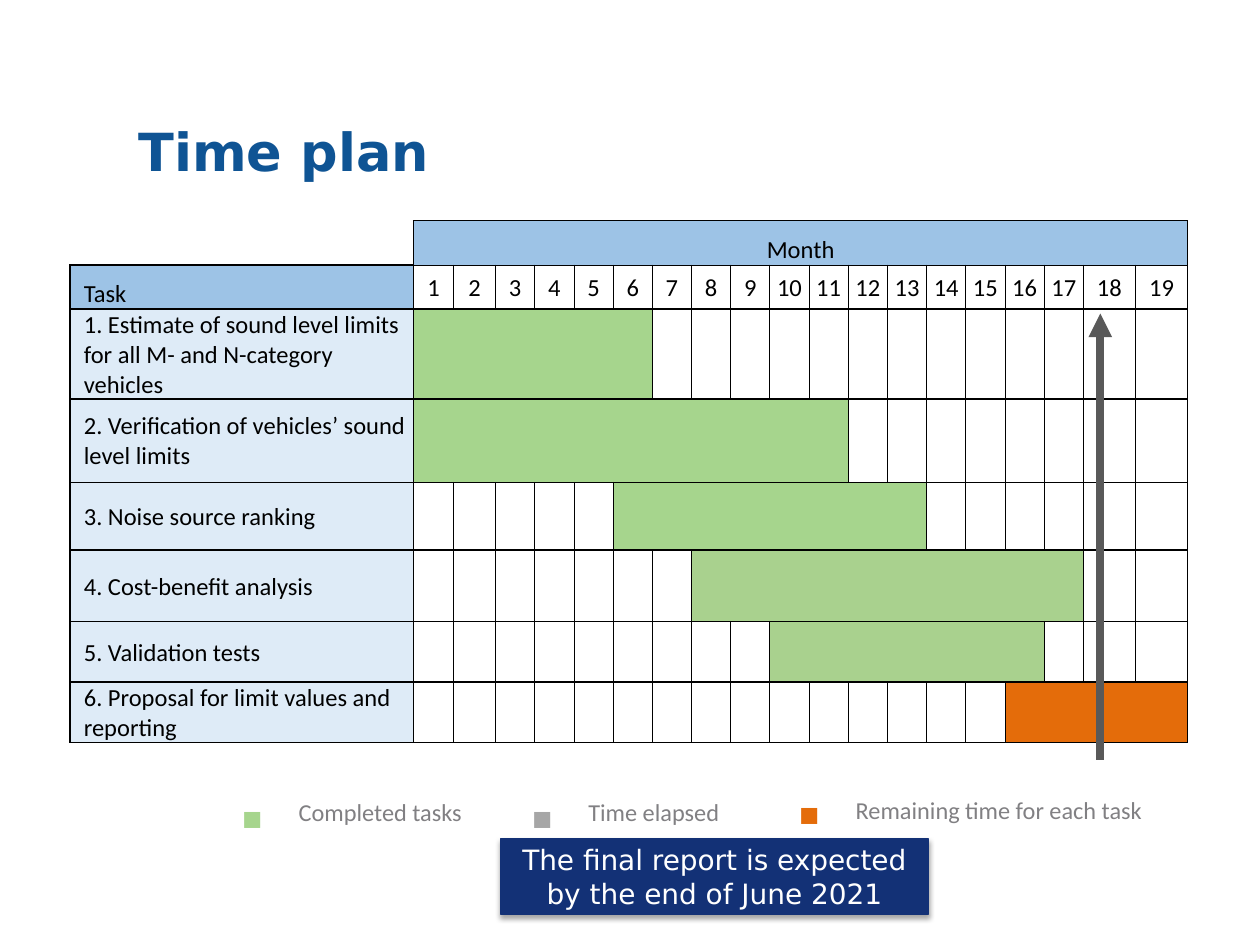
from lxml.etree import SubElement
from pptx import Presentation
from pptx.dml.color import RGBColor
from pptx.enum.shapes import MSO_CONNECTOR, MSO_SHAPE
from pptx.enum.text import MSO_ANCHOR as ANCHOR, PP_ALIGN as ALIGN
from pptx.oxml import parse_xml
from pptx.oxml.ns import nsdecls, qn
from pptx.util import Cm, Pt

BLACK, HEADER, TASK = "000000", "9DC3E6", "DEEBF7"
DONE, DONE_LATE, ELAPSED, REMAINING = "A6D58D", "A9D18E", "A6A6A6", "E46C0A"
LEGEND_TEXT, ARROW, NAVY, TITLE = "818083", "595959", "133176", "0F5494"

MONTHS = 19
# task, first month, last month, bar colour, row height in cm
TASKS = [
    ("1. Estimate of sound level limits for all M- and N-category vehicles", 1, 6, DONE, 1.81),
    ("2. Verification of vehicles’ sound level limits", 1, 11, DONE, 1.69),
    ("3. Noise source ranking", 6, 13, DONE, 1.36),
    ("4. Cost-benefit analysis", 8, 17, DONE_LATE, 1.44),
    ("5. Validation tests", 10, 16, DONE_LATE, 1.22),
    ("6. Proposal for limit values and reporting", 16, 19, REMAINING, 1.22),
]
HEADER_HEIGHT = 0.89
# task, month 1, three parts of month 2, months 3 to 17, months 18 and 19
COLUMN_WIDTHS = [6.93, 0.8, 0.31, 0.33, 0.21] + [0.79] * 15 + [1.05] * 2
LAST_COLUMN = len(COLUMN_WIDTHS) - 1
# label, bullet colour, baseline raise in %, left, top, width, height in cm
LEGEND = [
    ("Completed tasks", DONE, 35, 4.62, 15.88, 5.94, 1.04),
    ("Time elapsed", ELAPSED, 35, 10.46, 15.88, 5.94, 1.04),
    ("Remaining time for each task", REMAINING, 30, 15.85, 15.8, 9.07, 1.12),
]


def rgb(hex_color):
    return RGBColor.from_string(hex_color)


def month_columns(month):
    """First and last column of a month; month 2 is made of three columns."""
    return (month if month < 3 else month + 2), (month if month < 2 else month + 2)


def add_run(paragraph, text, color, **formats):
    run = paragraph.add_run()
    run.text = text
    run.font.color.rgb = rgb(color)
    for attribute, value in formats.items():
        setattr(run.font, attribute, value)
    return run


def add_text_box(slide, *box):
    frame = slide.shapes.add_textbox(*map(Cm, box)).text_frame
    frame.word_wrap = True
    return frame


def set_borders(cell, **widths):
    """Draw the sides L, R, T, B in points; a width of 0 hides the side."""
    properties = cell._tc.get_or_add_tcPr()
    for position, (side, width) in enumerate(widths.items()):
        paint = f'<a:solidFill><a:srgbClr val="{BLACK}"/></a:solidFill>' if width else "<a:noFill/>"
        properties.insert(position, parse_xml(
            f'<a:ln{side} {nsdecls("a")} w="{Pt(width)}">{paint}</a:ln{side}>'))


def fill_cell(cell, color):
    cell.fill.solid()
    cell.fill.fore_color.rgb = rgb(color)


def write_cell(cell, text, align=ALIGN.CENTER, anchor=ANCHOR.MIDDLE, left=0.03):
    cell.vertical_anchor = anchor
    cell.margin_left = Cm(left)
    paragraph = cell.text_frame.paragraphs[0]
    paragraph.alignment = align
    add_run(paragraph, text, BLACK, name="Calibri", size=Pt(14))


def border_cell(cell, row, column):
    last = column + (cell.span_width if cell.is_merge_origin else 1) - 1
    corner = row == column == 0
    set_borders(
        cell,
        L=0 if corner or column in (3, 4) else 1 if column < 2 else 0.5,
        R=0 if last in (2, 3) else 1 if last in (0, LAST_COLUMN) else 0.5,
        T=0 if corner else 0.5 if row == 1 and column else 1,
        B=0.5 if row == 0 and column else 1)


def add_gantt(slide):
    heights = [HEADER_HEIGHT] * 2 + [task[-1] for task in TASKS]
    gantt = slide.shapes.add_table(
        len(heights), len(COLUMN_WIDTHS), Cm(1.41), Cm(4.45),
        Cm(sum(COLUMN_WIDTHS)), Cm(sum(heights))).table
    gantt.first_row = gantt.horz_banding = False
    for column, width in zip(gantt.columns, COLUMN_WIDTHS):
        column.width = Cm(width)
    for row, height in zip(gantt.rows, heights):
        row.height = Cm(height)
    for cell in gantt.iter_cells():
        cell.fill.background()
        cell.margin_left = cell.margin_right = cell.margin_top = Cm(0.03)
        cell.margin_bottom = 0

    def merge_months(row, first, last):
        start, end = month_columns(first)[0], month_columns(last)[1]
        cell = gantt.cell(row, start)
        if end > start:
            cell.merge(gantt.cell(row, end))
        return cell

    month_header = merge_months(0, 1, MONTHS)
    fill_cell(month_header, HEADER)
    write_cell(month_header, "Month", anchor=ANCHOR.BOTTOM)
    fill_cell(gantt.cell(1, 0), HEADER)
    write_cell(gantt.cell(1, 0), "Task", ALIGN.LEFT, ANCHOR.BOTTOM, 0.28)
    for month in range(1, MONTHS + 1):
        write_cell(merge_months(1, month, month), str(month))
    for row, (task, first, last, color, _) in enumerate(TASKS, start=2):
        fill_cell(gantt.cell(row, 0), TASK)
        write_cell(gantt.cell(row, 0), task, ALIGN.LEFT, left=0.28)
        fill_cell(merge_months(row, first, last), color)

    for row in range(len(heights)):
        for column in range(len(COLUMN_WIDTHS)):
            cell = gantt.cell(row, column)
            if not cell.is_spanned:
                border_cell(cell, row, column)


def add_legend(slide):
    for label, color, raised, *box in LEGEND:
        paragraph = add_text_box(slide, *box).paragraphs[0]
        properties = paragraph._p.get_or_add_pPr()
        properties.set("marL", str(Cm(0.96)))
        properties.set("indent", str(-Cm(0.96)))
        SubElement(SubElement(properties, qn("a:buClr")), qn("a:srgbClr"), val=color)
        SubElement(properties, qn("a:buSzPct"), val="150000")
        SubElement(properties, qn("a:buFont"), typeface="Calibri")
        SubElement(properties, qn("a:buChar"), char="▪")
        style = {"name": "Calibri", "size": Pt(24)}
        add_run(paragraph, " ", LEGEND_TEXT, **style)
        label_run = add_run(paragraph, label, LEGEND_TEXT, **style)
        label_run.font._element.set("baseline", str(raised * 1000))


def add_today_arrow(slide):
    arrow = slide.shapes.add_connector(
        MSO_CONNECTOR.STRAIGHT, Cm(22.18), Cm(15.32), Cm(22.18), Cm(6.32))
    arrow.line.color.rgb = rgb(ARROW)
    arrow.line.width = Pt(4.5)
    SubElement(arrow.line._get_or_add_ln(), qn("a:tailEnd"), type="triangle")
    SubElement(arrow._element.spPr, qn("a:effectLst"))


def add_deadline(slide):
    deadline = slide.shapes.add_shape(
        MSO_SHAPE.RECTANGLE, Cm(10.1), Cm(16.91), Cm(8.61), Cm(1.52))
    deadline.fill.solid()
    deadline.fill.fore_color.rgb = deadline.line.color.rgb = rgb(NAVY)
    deadline.line.width = Pt(0.75)
    deadline._element.spPr.append(parse_xml(
        f'<a:effectLst {nsdecls("a")}><a:outerShdw blurRad="{Pt(3.1)}" dist="{Pt(1.8)}" '
        f'dir="5400000" rotWithShape="0"><a:srgbClr val="{BLACK}"><a:alpha val="35000"/>'
        '</a:srgbClr></a:outerShdw></a:effectLst>'))
    frame = deadline.text_frame
    frame.word_wrap = True
    frame.vertical_anchor = ANCHOR.MIDDLE
    frame.paragraphs[0].alignment = ALIGN.CENTER
    add_run(frame.paragraphs[0], "The final report is expected by the end of June 2021",
            "FFFFFF", name="DejaVu Sans", size=Pt(16))


def main():
    deck = Presentation()
    deck.slide_width, deck.slide_height = Cm(25.4), Cm(19.05)
    slide = deck.slides.add_slide(deck.slide_layouts[6])
    heading = add_text_box(slide, 2.54, 1.75, 22.86, 2.59)
    heading.vertical_anchor = ANCHOR.MIDDLE
    add_run(heading.paragraphs[0], "Time plan", TITLE,
            name="DejaVu Sans", size=Pt(30), bold=True)
    add_deadline(slide)
    add_gantt(slide)
    add_legend(slide)
    add_today_arrow(slide)
    deck.save("out.pptx")


if __name__ == "__main__":
    main()
